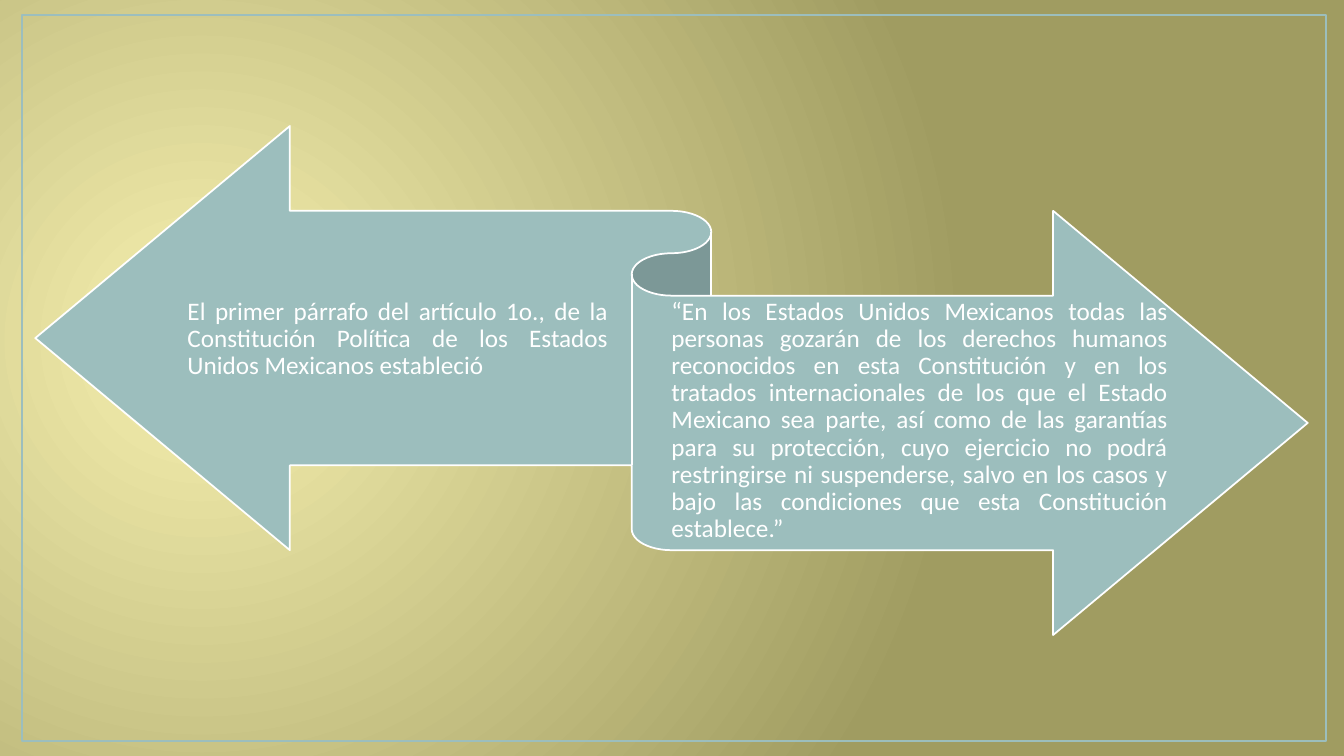
"""Build a slide with a two-way ribbon on the first article of the Mexican Constitution."""
from dataclasses import dataclass

from lxml.etree import SubElement
from pptx import Presentation
from pptx.dml.color import RGBColor
from pptx.enum.shapes import MSO_SHAPE as Preset
from pptx.enum.text import MSO_ANCHOR as Anchor, PP_ALIGN as Align
from pptx.oxml.ns import qn
from pptx.shapes.autoshape import Shape
from pptx.slide import Slide
from pptx.util import Inches, Pt


@dataclass(frozen=True)
class Theme:
    glow: RGBColor = RGBColor(0xF6, 0xF0, 0xAF)
    olive: RGBColor = RGBColor(0xA0, 0x9C, 0x61)
    teal: RGBColor = RGBColor(0x9C, 0xBE, 0xBD)
    white: RGBColor = RGBColor(0xFF, 0xFF, 0xFF)
    font: str = "Calibri"
    body_size: float = 18


@dataclass(frozen=True)
class Box:
    left: float
    top: float
    width: float
    height: float

    def lengths(self) -> tuple[Inches, ...]:
        return tuple(map(Inches, (self.left, self.top, self.width, self.height)))


@dataclass(frozen=True)
class Passage:
    box: Box
    text: str


THEME = Theme()
FRAME = Box(0.22, 0.15, 12.93, 7.2)
RIBBON = Box(0.35, 1.25, 12.62, 5.05)
PASSAGES = (
    Passage(
        Box(1.86, 2.13, 4.17, 2.47),
        "El primer párrafo del artículo 1o., de la Constitución Política "
        "de los Estados Unidos Mexicanos estableció",
    ),
    Passage(
        Box(6.66, 2.94, 4.92, 2.47),
        "“En los Estados Unidos Mexicanos todas las personas gozarán de los "
        "derechos humanos reconocidos en esta Constitución y en los tratados "
        "internacionales de los que el Estado Mexicano sea parte, así como de "
        "las garantías para su protección, cuyo ejercicio no podrá restringirse "
        "ni suspenderse, salvo en los casos y bajo las condiciones que esta "
        "Constitución establece.”",
    ),
)


def paint_background(slide: Slide) -> None:
    fill = slide.background.fill
    fill.gradient()
    for stop, color, position in zip(
        fill.gradient_stops, (THEME.glow, THEME.olive), (0, 1)
    ):
        stop.color.rgb = color
        stop.position = position
    gradient = slide.element.find(f".//{qn('a:gradFill')}")
    gradient.remove(gradient.find(qn("a:lin")))
    circle = SubElement(gradient, qn("a:path"), {"path": "circle"})
    focus = {"l": "15000", "t": "50000", "r": "85000", "b": "60000"}
    SubElement(circle, qn("a:fillToRect"), focus)


def add_outline(
    slide: Slide, preset: Preset, box: Box, line: RGBColor, weight: float
) -> Shape:
    outline = slide.shapes.add_shape(preset, *box.lengths())
    outline.shadow.inherit = False
    outline.fill.background()
    outline.line.color.rgb = line
    outline.line.width = Pt(weight)
    return outline


def add_passage(slide: Slide, passage: Passage) -> None:
    frame = slide.shapes.add_textbox(*passage.box.lengths()).text_frame
    frame.word_wrap = True
    frame.vertical_anchor = Anchor.MIDDLE
    frame.margin_left = frame.margin_right = 0
    frame.margin_top = frame.margin_bottom = Inches(0.07)
    paragraph = frame.paragraphs[0]
    paragraph.alignment = Align.JUSTIFY
    paragraph.line_spacing = 0.9
    paragraph.space_after = Pt(0.35 * THEME.body_size)
    run = paragraph.add_run()
    run.text = passage.text
    run.font.name = THEME.font
    run.font.size = Pt(THEME.body_size)
    run.font.color.rgb = THEME.white


def main() -> None:
    deck = Presentation()
    deck.slide_width, deck.slide_height = Inches(13.33), Inches(7.5)
    slide = deck.slides.add_slide(deck.slide_layouts.get_by_name("Blank"))
    paint_background(slide)
    add_outline(slide, Preset.RECTANGLE, FRAME, THEME.teal, 1.5)
    ribbon = add_outline(slide, Preset.LEFT_RIGHT_RIBBON, RIBBON, THEME.white, 1.25)
    ribbon.fill.solid()
    ribbon.fill.fore_color.rgb = THEME.teal
    for passage in PASSAGES:
        add_passage(slide, passage)
    deck.save("out.pptx")


if __name__ == "__main__":
    main()
